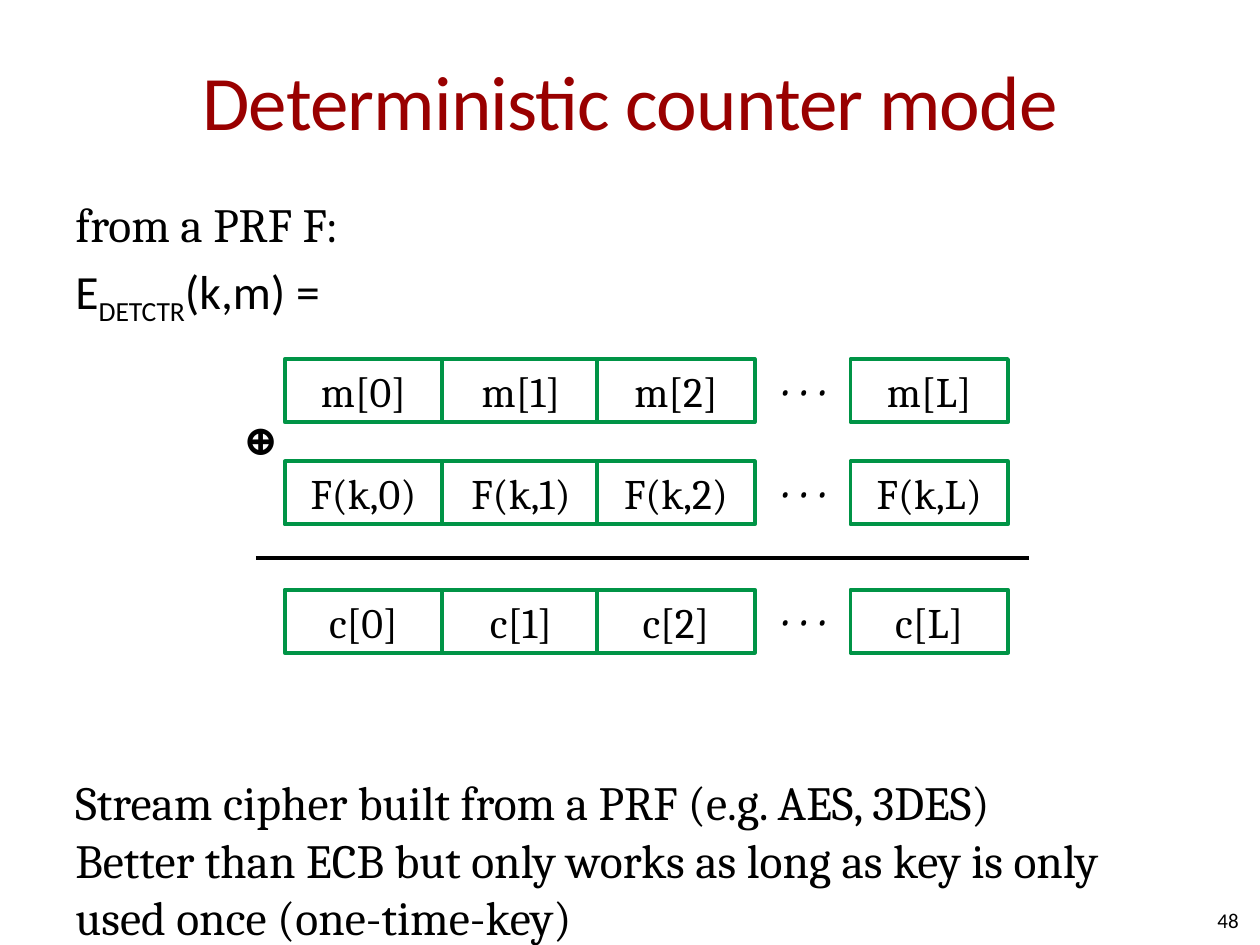
"""Build the slide that explains deterministic counter mode."""
from dataclasses import dataclass
from typing import NamedTuple

from lxml.etree import SubElement
from pptx import Presentation
from pptx.dml.color import RGBColor
from pptx.enum.shapes import MSO_CONNECTOR, MSO_SHAPE
from pptx.enum.text import MSO_ANCHOR, PP_ALIGN
from pptx.oxml.ns import qn
from pptx.util import Pt


@dataclass(frozen=True)
class Theme:
    heading_font: str = "Calibri"
    text_font: str = "Cambria"
    title_color: RGBColor = RGBColor(0x99, 0x00, 0x00)
    ink: RGBColor = RGBColor(0x00, 0x00, 0x00)
    paper: RGBColor = RGBColor(0xFF, 0xFF, 0xFF)
    border: RGBColor = RGBColor(0x00, 0x94, 0x46)
    title_size: float = 44
    body_size: float = 27.2
    block_size: float = 24
    dots_size: float = 16
    number_size: float = 12
    line_width: float = 2.25


class Area(NamedTuple):
    left: float
    top: float
    width: float
    height: float

    def lengths(self) -> list:
        return [Pt(value) for value in self]


class BlockRow(NamedTuple):
    top: float
    label: str


THEME = Theme()
ROWS = [BlockRow(205.2, "m[{}]"), BlockRow(263.7, "F(k,{})"), BlockRow(337, "c[{}]")]
COLUMNS = {"0": 162.7, "1": 252.7, "2": 341.3, "L": 486}
BLOCK_WIDTH, BLOCK_HEIGHT = 90, 36
DOTS_LEFT, DOTS_DROP = 445, 8


def style_paragraph(para, size: float, font=THEME.text_font, color=THEME.ink,
                    align=PP_ALIGN.LEFT) -> None:
    para.alignment = align
    for span in para.runs:
        span.font.size = Pt(size)
        span.font.name = font
        span.font.color.rgb = color


def set_margins(frame, horizontal: float = 0, vertical: float = 0) -> None:
    frame.margin_left = frame.margin_right = Pt(horizontal)
    frame.margin_top = frame.margin_bottom = Pt(vertical)


def add_text(page, area: Area, text: str, size: float, align=PP_ALIGN.CENTER,
             font=THEME.text_font, wrap: bool = False):
    box = page.shapes.add_textbox(*area.lengths())
    frame = box.text_frame
    frame.word_wrap = wrap
    set_margins(frame)
    frame.text = text
    style_paragraph(frame.paragraphs[0], size, font, align=align)
    return box


def add_title(page) -> None:
    title = page.shapes.title
    title.left, title.top, title.width, title.height = Area(36, 12.2, 648, 90).lengths()
    frame = title.text_frame
    frame.text = "Deterministic counter mode"
    frame.vertical_anchor = MSO_ANCHOR.MIDDLE
    set_margins(frame, vertical=3.6)
    para = frame.paragraphs[0]
    style_paragraph(para, THEME.title_size, THEME.heading_font, THEME.title_color,
                    PP_ALIGN.CENTER)
    para.runs[0].font._element.set("spc", "-50")


def add_body(page) -> None:
    box = page.shapes.add_textbox(*Area(36, 108, 648, 408).lengths())
    frame = box.text_frame
    frame.word_wrap = True
    frame.text = "from a PRF F:"
    intro = frame.paragraphs[0]
    formula, summary = frame.add_paragraph(), frame.add_paragraph()
    for part in ("E", "DETCTR", "(k,m) ="):
        formula.add_run().text = part
    formula.runs[1].font._element.set("baseline", "-25000")
    summary.text = ("Stream cipher built from a PRF (e.g. AES, 3DES)\v"
                    "Better than ECB but only works as long as key is only "
                    "used once (one-time-key)")
    fonts = (THEME.text_font, THEME.heading_font, THEME.text_font)
    for para, font, gap in zip((intro, formula, summary), fonts, (5.4, 5.4, 255.1)):
        style_paragraph(para, THEME.body_size, font)
        para.space_before = Pt(gap)


def add_block(page, left: float, top: float, text: str) -> None:
    area = Area(left, top, BLOCK_WIDTH, BLOCK_HEIGHT)
    block = page.shapes.add_shape(MSO_SHAPE.RECTANGLE, *area.lengths())
    block.shadow.inherit = False
    block.fill.solid()
    block.fill.fore_color.rgb = THEME.paper
    block.line.color.rgb = THEME.border
    block.line.width = Pt(THEME.line_width)
    frame = block.text_frame
    set_margins(frame)
    frame.vertical_anchor = MSO_ANCHOR.MIDDLE
    frame.text = text
    style_paragraph(frame.paragraphs[0], THEME.block_size, align=PP_ALIGN.CENTER)


def add_row(page, row: BlockRow) -> None:
    for index, left in COLUMNS.items():
        add_block(page, left, row.top, row.label.format(index))
    area = Area(DOTS_LEFT, row.top + DOTS_DROP, 28.8, 19.4)
    dots = add_text(page, area, "• • •", THEME.dots_size)
    dots.text_frame.paragraphs[0].runs[0].font.italic = True


def add_rule(page, left: float, right: float, top: float) -> None:
    rule = page.shapes.add_connector(MSO_CONNECTOR.STRAIGHT, Pt(left), Pt(top),
                                     Pt(right), Pt(top))
    rule.line.color.rgb = THEME.ink
    rule.line.width = Pt(THEME.line_width)
    SubElement(rule._element.spPr, qn("a:effectLst"))


def main() -> None:
    deck = Presentation()
    deck.slide_width, deck.slide_height = Pt(720), Pt(540)
    page = deck.slides.add_slide(deck.slide_layouts[5])
    add_title(page)
    add_text(page, Area(540, 511.2, 167.8, 28.8), "48", THEME.number_size, PP_ALIGN.RIGHT,
             THEME.heading_font, wrap=True).text_frame.vertical_anchor = MSO_ANCHOR.MIDDLE
    add_body(page)
    for row in ROWS:
        add_row(page, row)
    xor = add_text(page, Area(131.8, 232.6, 27.4, 36), "⊕", THEME.block_size)
    set_margins(xor.text_frame, 7.2, 3.6)
    xor.text_frame.paragraphs[0].runs[0].font.bold = True
    add_rule(page, 146.2, 588.2, 319)
    deck.save("out.pptx")


if __name__ == "__main__":
    main()
